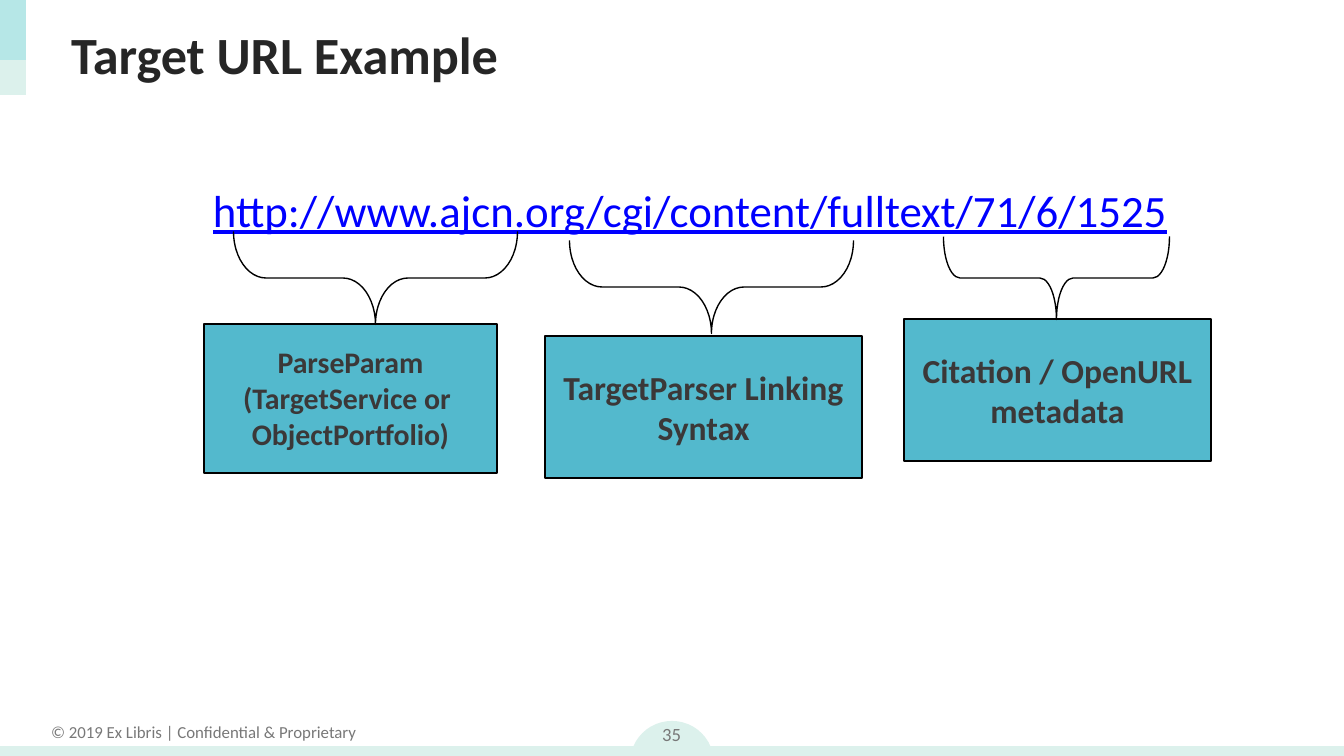
from lxml.etree import SubElement
from pptx import Presentation
from pptx.dml.color import RGBColor
from pptx.enum.shapes import MSO_SHAPE
from pptx.enum.text import MSO_ANCHOR, PP_ALIGN
from pptx.oxml.ns import qn
from pptx.util import Emu, Pt

SCALE = 914400 / 134.4
FONT = "Calibri"
MINT = "DCF1EC"
AQUA = "50CFDA"
TEAL = "53B9CD"
BLACK = "000000"
GRAY = "787878"
CHARCOAL = "3B3838"


def px(length):
    return Emu(round(length * SCALE))


def color(value):
    return RGBColor.from_string(value)


def add_plain_shape(page, kind, place, fill=None, line=None):
    shape = page.shapes.add_shape(kind, *map(px, place))
    shape.shadow.inherit = False
    if fill:
        shape.fill.solid()
        shape.fill.fore_color.rgb = color(fill)
    else:
        shape.fill.background()
    if line:
        shape.line.color.rgb = color(line)
        shape.line.width = Pt(0.75)
    else:
        shape.line.fill.background()
    return shape


def set_opacity(shape, percent):
    fill = shape._element.spPr.find(qn("a:solidFill"))
    SubElement(fill[0], qn("a:alpha"), val=str(percent * 1000))


def write_lines(shape, lines, size, ink, align=PP_ALIGN.LEFT, anchor=MSO_ANCHOR.TOP,
                inset=(13, 7), bold=False, underline=False, wrap=True):
    frame = shape.text_frame
    frame.word_wrap = wrap
    frame.vertical_anchor = anchor
    frame.margin_left = frame.margin_right = px(inset[0])
    frame.margin_top = frame.margin_bottom = px(inset[1])
    for index, line in enumerate(lines):
        para = frame.add_paragraph() if index else frame.paragraphs[0]
        para.alignment = align
        span = para.add_run()
        span.text = line
        span.font.name = FONT
        span.font.size = Pt(size)
        span.font.bold = bold
        span.font.underline = underline
        span.font.color.rgb = color(ink)


def add_text(page, place, line, size, ink, **style):
    box = page.shapes.add_textbox(*map(px, place))
    write_lines(box, [line], size, ink, **style)


def add_label(page, place, lines, size, top_inset):
    box = add_plain_shape(page, MSO_SHAPE.RECTANGLE, place, TEAL, BLACK)
    write_lines(box, lines, size, CHARCOAL, align=PP_ALIGN.CENTER,
                inset=(13, top_inset), bold=True)


def add_brace(page, place, curve):
    brace = add_plain_shape(page, MSO_SHAPE.LEFT_BRACE, place, line=BLACK)
    brace.adjustments[0] = curve
    brace.adjustments[1] = 0.5
    brace.rotation = 270


def add_frame(page):
    add_plain_shape(page, MSO_SHAPE.OVAL, (630, 721, 84, 84), MINT)
    add_text(page, (36, 715, 335, 34), "© 2019 Ex Libris | Confidential & Proprietary",
             9, GRAY, align=PP_ALIGN.CENTER, wrap=False)
    add_plain_shape(page, MSO_SHAPE.RECTANGLE, (0, 746, 1344, 15), MINT)
    add_plain_shape(page, MSO_SHAPE.RECTANGLE, (0, 0, 26, 95), MINT)
    accent = add_plain_shape(page, MSO_SHAPE.RECTANGLE, (0, 0, 26, 60), AQUA)
    set_opacity(accent, 27)
    add_text(page, (632, 707, 79, 54), "35", 10, GRAY,
             align=PP_ALIGN.CENTER, anchor=MSO_ANCHOR.MIDDLE)


def main():
    deck = Presentation()
    deck.slide_width = px(1344)
    deck.slide_height = px(756)
    page = deck.slides.add_slide(deck.slide_layouts[6])

    add_frame(page)
    add_text(page, (58, 11, 1238, 85), "Target URL Example", 28, "262626",
             anchor=MSO_ANCHOR.MIDDLE, bold=True)
    add_text(page, (203, 178, 1019, 517),
             "http://www.ajcn.org/cgi/content/fulltext/71/6/1525",
             24, "0000FF", inset=(10, 5), underline=True)

    labels = [
        ((204, 324, 293, 149),
         ["ParseParam", "(TargetService or ", "ObjectPortfolio)"], 16, 20),
        ((545, 336, 317, 142), ["TargetParser Linking Syntax"], 18, 31),
        ((904, 319, 307, 142), ["Citation / OpenURL metadata"], 18, 31),
    ]
    for label in labels:
        add_label(page, *label)

    braces = [
        ((329, 136, 93, 284), 0.35),
        ((665, 145, 93, 284), 0.35),
        ((1015, 165, 83, 226), 0.2),
    ]
    for place, curve in braces:
        add_brace(page, place, curve)

    deck.save("out.pptx")


if __name__ == "__main__":
    main()
